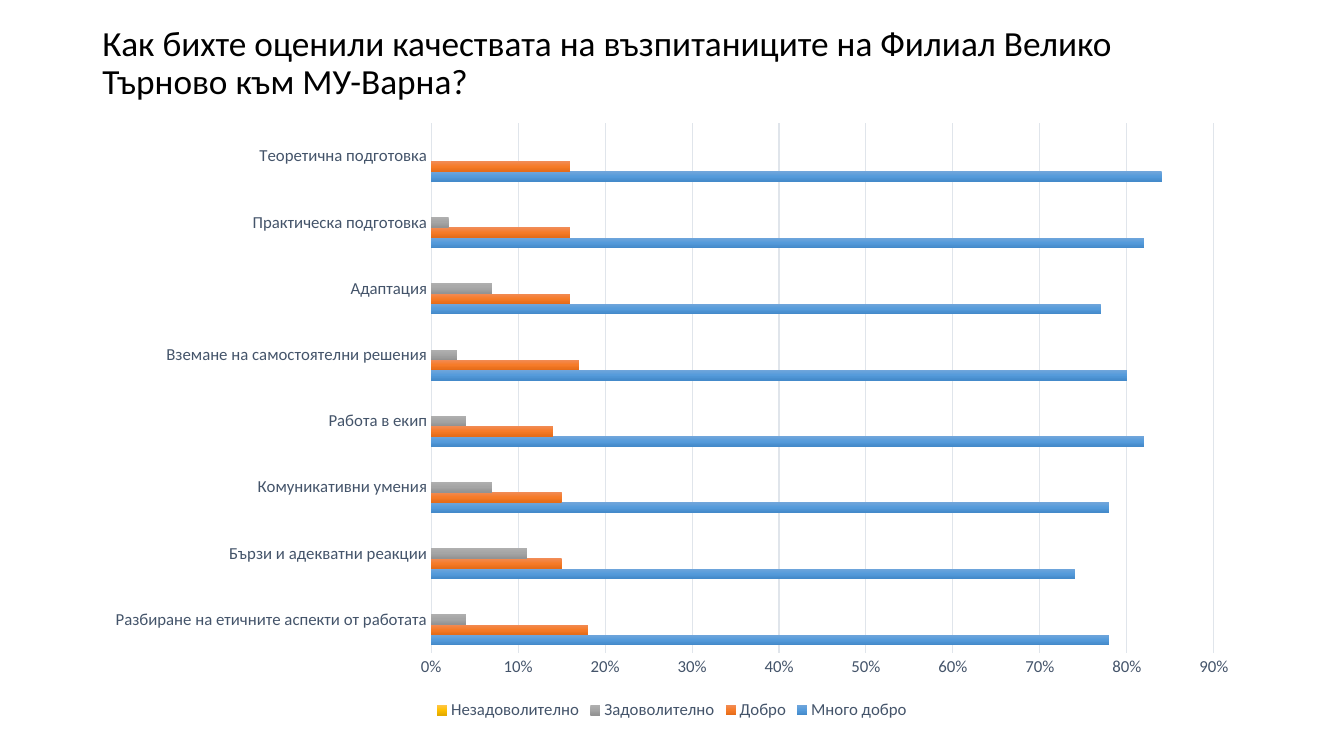
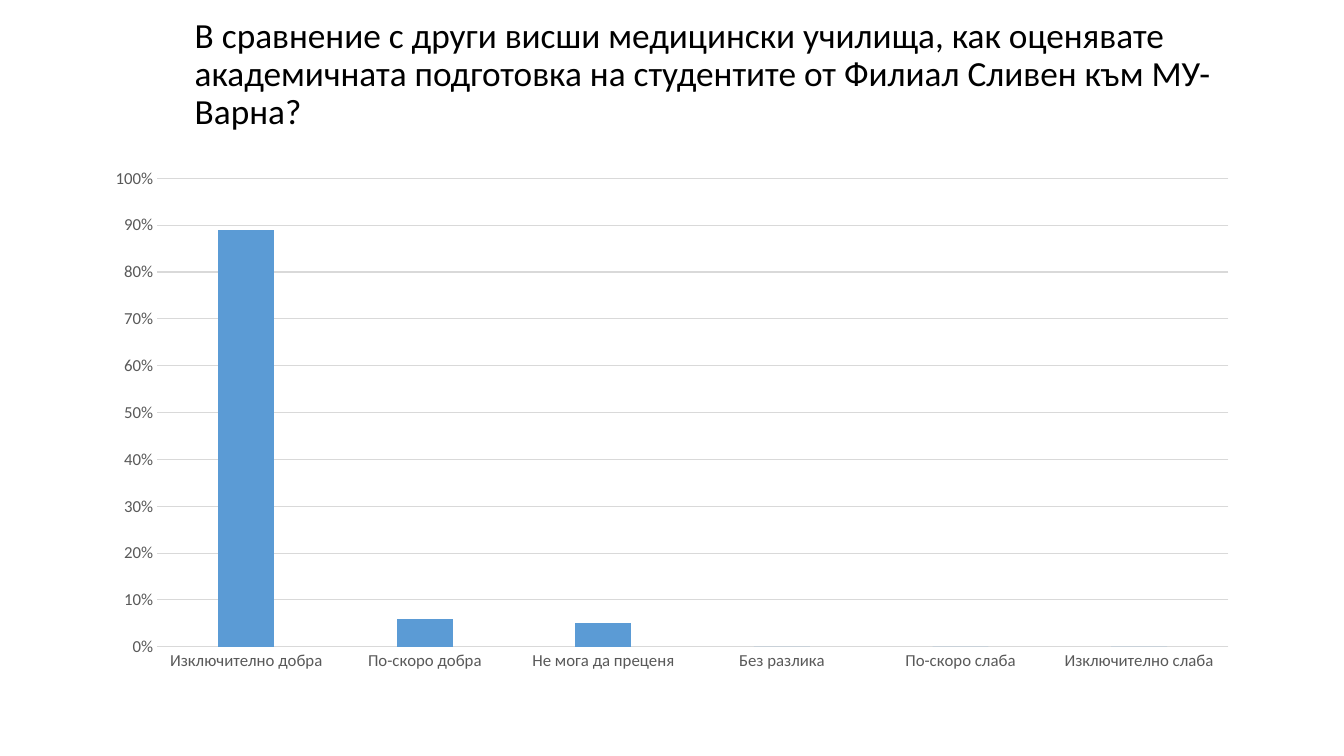
from dataclasses import dataclass
from typing import NamedTuple, Optional

from lxml.etree import SubElement
from pptx import Presentation
from pptx.chart.data import CategoryChartData
from pptx.dml.color import RGBColor
from pptx.enum.chart import XL_CHART_TYPE as ChartKind
from pptx.enum.chart import XL_LEGEND_POSITION as LegendPlace
from pptx.enum.chart import XL_TICK_MARK as TickMark
from pptx.enum.text import MSO_ANCHOR as Anchor
from pptx.oxml.ns import qn
from pptx.util import Inches, Pt

# Shared style
FONT = "Calibri"
TITLE_SIZE = 25.2
AXIS_SIZE = 12
LINE_WIDTH = 0.75
PERCENT = "0%"
BLACK = RGBColor(0x00, 0x00, 0x00)
SLATE = RGBColor(0x44, 0x54, 0x6A)
GRAY = RGBColor(0x59, 0x59, 0x59)
PALE_BLUE = RGBColor(0xE0, 0xE5, 0xEB)
PALE_GRAY = RGBColor(0xD9, 0xD9, 0xD9)
BLUE = RGBColor(0x5B, 0x9B, 0xD5)

# Gradients run from the top of a bar to its bottom
BLUE_SHADES = (RGBColor(0x71, 0xA6, 0xDB), RGBColor(0x55, 0x9B, 0xDB), RGBColor(0x44, 0x8A, 0xCA))
ORANGE_SHADES = (RGBColor(0xF1, 0x8C, 0x57), RGBColor(0xF6, 0x7B, 0x28), RGBColor(0xE5, 0x6C, 0x19))
GRAY_SHADES = (RGBColor(0xAF, 0xAF, 0xAF), RGBColor(0xA5, 0xA5, 0xA5), RGBColor(0x93, 0x93, 0x93))
GOLD_SHADES = (RGBColor(0xFF, 0xC6, 0x4B), RGBColor(0xFF, 0xC0, 0x00), RGBColor(0xE3, 0xAB, 0x00))
NAVY_SHADES = (RGBColor(0x61, 0x83, 0xCB), RGBColor(0x3E, 0x70, 0xCA), RGBColor(0x30, 0x62, 0xBB))

# The slide is a grid of 160 columns by 90 rows
COLUMNS, ROWS = 160, 90
SLIDE_WIDTH, SLIDE_HEIGHT = Inches(13.333), Inches(7.5)
MARGIN = 11
CONTENT_COLUMNS = COLUMNS - 2 * MARGIN


class Area(NamedTuple):
    """A rectangle in grid columns and rows."""

    column: float
    row: float
    columns: float
    rows: float

    def lengths(self) -> tuple[int, int, int, int]:
        return (
            round(SLIDE_WIDTH * self.column / COLUMNS),
            round(SLIDE_HEIGHT * self.row / ROWS),
            round(SLIDE_WIDTH * self.columns / COLUMNS),
            round(SLIDE_HEIGHT * self.rows / ROWS),
        )


class Answer(NamedTuple):
    name: str
    values: tuple[Optional[float], ...]
    shades: tuple[RGBColor, ...]


@dataclass(frozen=True)
class Survey:
    question: str
    title_area: Area
    chart_area: Area
    kind: ChartKind
    categories: tuple[str, ...]
    answers: tuple[Answer, ...]
    text_color: RGBColor
    line_color: RGBColor
    maximum: float
    gap: int
    overlap: int = 0
    hidden_entry: Optional[int] = None
    has_legend: bool = False


NO_VALUES = (None,) * 8

SURVEYS = (
    Survey(
        question="Как бихте оценили качествата на възпитаниците на Филиал Велико Търново към МУ-Варна?",
        title_area=Area(MARGIN, 2, CONTENT_COLUMNS, 11.2),
        chart_area=Area(MARGIN, 13.2, CONTENT_COLUMNS, 73),
        kind=ChartKind.BAR_CLUSTERED,
        categories=(
            "Разбиране на етичните аспекти от работата",
            "Бързи и адекватни реакции",
            "Комуникативни умения",
            "Работа в екип",
            "Вземане на самостоятелни решения",
            "Адаптация",
            "Практическа подготовка",
            "Теоретична подготовка",
        ),
        answers=(
            Answer("Много добро", (0.78, 0.74, 0.78, 0.82, 0.8, 0.77, 0.82, 0.84), BLUE_SHADES),
            Answer("Добро", (0.18, 0.15, 0.15, 0.14, 0.17, 0.16, 0.16, 0.16), ORANGE_SHADES),
            Answer("Задоволително", (0.04, 0.11, 0.07, 0.04, 0.03, 0.07, 0.02, None), GRAY_SHADES),
            Answer("Незадоволително", NO_VALUES, GOLD_SHADES),
            Answer("", NO_VALUES, NAVY_SHADES),
        ),
        text_color=SLATE,
        line_color=PALE_BLUE,
        maximum=0.9,
        gap=150,
        hidden_entry=0,
        has_legend=True,
    ),
    Survey(
        question=(
            "В сравнение с други висши медицински училища, как оценявате "
            "академичната подготовка на студентите от Филиал Сливен към МУ-Варна?"
        ),
        title_area=Area(2 * MARGIN, 1.8, CONTENT_COLUMNS - MARGIN, 14.3),
        chart_area=Area(MARGIN, 18.8, CONTENT_COLUMNS, 62.3),
        kind=ChartKind.COLUMN_CLUSTERED,
        categories=(
            "Изключително добра",
            "По-скоро добра",
            "Не мога да преценя",
            "Без разлика",
            "По-скоро слаба",
            "Изключително слаба",
        ),
        answers=(Answer("Дял", (0.89, 0.06, 0.05, 0, 0, 0), (BLUE,)),),
        text_color=GRAY,
        line_color=PALE_GRAY,
        maximum=1,
        gap=219,
        overlap=-27,
    ),
)


def set_font(font, *, size: float, color: RGBColor) -> None:
    font.name = FONT
    font.size = Pt(size)
    font.color.rgb = color


def set_line(line, color: RGBColor) -> None:
    line.color.rgb = color
    line.width = Pt(LINE_WIDTH)


def add_title(page, text: str, *, area: Area, size: float = TITLE_SIZE, color: RGBColor = BLACK) -> None:
    frame = page.shapes.add_textbox(*area.lengths()).text_frame
    frame.word_wrap = True
    frame.vertical_anchor = Anchor.MIDDLE
    para = frame.paragraphs[0]
    para.line_spacing = 0.9
    span = para.add_run()
    span.text = text
    set_font(span.font, size=size, color=color)


def fill_series(series, shades: tuple[RGBColor, ...]) -> None:
    """One shade gives a solid fill, several an even vertical gradient."""
    series.invert_if_negative = False
    fill = series.format.fill
    if len(shades) == 1:
        fill.solid()
        fill.fore_color.rgb = shades[0]
        return
    fill.gradient()
    fill.gradient_angle = 270
    stops = next(series._element.iter(qn("a:gsLst")))
    for stop in list(stops):
        stops.remove(stop)
    for index, shade in enumerate(shades):
        position = 100000 * index // (len(shades) - 1)
        stop = SubElement(stops, qn("a:gs"), pos=str(position))
        SubElement(stop, qn("a:srgbClr"), val=str(shade))


def style_axes(chart, survey: Survey) -> None:
    for axis in (chart.category_axis, chart.value_axis):
        axis.major_tick_mark = axis.minor_tick_mark = TickMark.NONE
        set_font(axis.tick_labels.font, size=AXIS_SIZE, color=survey.text_color)
    set_line(chart.category_axis.format.line, survey.line_color)
    values = chart.value_axis
    values.minimum_scale, values.maximum_scale, values.major_unit = 0, survey.maximum, 0.1
    values.tick_labels.number_format = PERCENT
    values.tick_labels.number_format_is_linked = False
    values.format.line.fill.background()
    values.has_major_gridlines = True
    set_line(values.major_gridlines.format.line, survey.line_color)


def add_legend(chart, *, color: RGBColor, hidden_entry: Optional[int]) -> None:
    chart.has_legend = True
    legend = chart.legend
    legend.position = LegendPlace.BOTTOM
    legend.include_in_layout = False
    set_font(legend.font, size=AXIS_SIZE, color=color)
    if hidden_entry is not None:
        entry = SubElement(legend._element, qn("c:legendEntry"))
        SubElement(entry, qn("c:idx"), val=str(hidden_entry))
        SubElement(entry, qn("c:delete"), val="1")
        legend._element.find(qn("c:legendPos")).addnext(entry)


def add_survey_chart(page, survey: Survey) -> None:
    data = CategoryChartData(number_format=PERCENT)
    data.categories = survey.categories
    for answer in survey.answers:
        data.add_series(answer.name, answer.values)
    chart = page.shapes.add_chart(survey.kind, *survey.chart_area.lengths(), data).chart
    chart.has_title = False
    chart.has_legend = False
    set_font(chart.font, size=10, color=BLACK)
    plot = chart.plots[0]
    plot.vary_by_categories = False
    plot.gap_width = survey.gap
    plot.overlap = survey.overlap
    for series, answer in zip(plot.series, survey.answers):
        fill_series(series, answer.shades)
    style_axes(chart, survey)
    if survey.has_legend:
        add_legend(chart, color=survey.text_color, hidden_entry=survey.hidden_entry)


def main() -> None:
    deck = Presentation()
    deck.slide_width, deck.slide_height = SLIDE_WIDTH, SLIDE_HEIGHT
    blank = deck.slide_layouts[6]
    for survey in SURVEYS:
        page = deck.slides.add_slide(blank)
        add_title(page, survey.question, area=survey.title_area)
        add_survey_chart(page, survey)
    deck.save("out.pptx")


if __name__ == "__main__":
    main()
